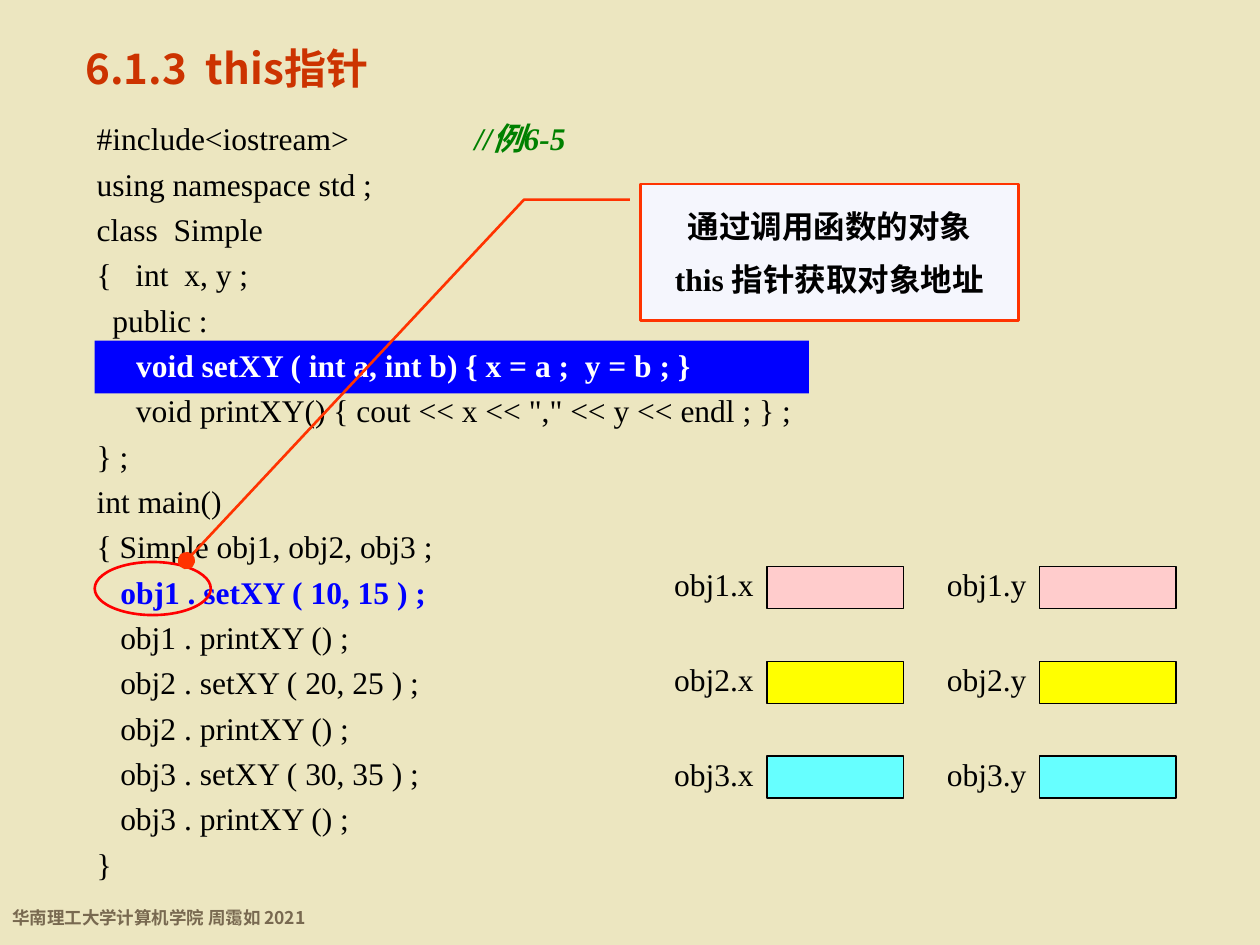
from lxml.etree import SubElement
from pptx import Presentation
from pptx.dml.color import RGBColor
from pptx.enum.shapes import MSO_SHAPE
from pptx.enum.text import MSO_ANCHOR, PP_ALIGN
from pptx.oxml.ns import qn
from pptx.util import Cm, Pt

SANS = "Noto Sans CJK SC"
SERIF = "Times New Roman"


def ink(code):
    return RGBColor.from_string(code)


def style(para, size, face, hue, bold, space):
    para.line_spacing = space
    font = para.font
    font.size = Pt(size)
    font.name = face
    font.bold = bold
    font.color.rgb = ink(hue)
    base = para._p.pPr.find(qn("a:defRPr"))
    SubElement(base, qn("a:ea")).set("typeface", SANS)


deck = Presentation()
deck.slide_width = Cm(25.4)
deck.slide_height = Cm(19.05)
slide = deck.slides.add_slide(deck.slide_layouts[6])
slide.background.fill.solid()
slide.background.fill.fore_color.rgb = ink("ECE6C0")
shapes = slide.shapes

bar = shapes.add_shape(MSO_SHAPE.RECTANGLE, Cm(1.91), Cm(6.87), Cm(14.4), Cm(1.06))
bar.shadow.inherit = False
bar.fill.solid()
bar.fill.fore_color.rgb = ink("0000FF")
bar.line.fill.background()

texts = [
    ("华南理工大学计算机学院 周霭如 2021", 0, 17.99, 6.76, 0.86, 10, SANS, "786950", True, 1.4),
    ("6.1.3  this指针", 1.47, 0.74, 15.67, 1.7, 24, SANS, "CC3300", True, 1),
]
for row, hue in enumerate(("FFCCCC", "FFFF00", "66FFFF")):
    top = 11.42 + row * 1.91
    for col, name in enumerate("xy"):
        left = 13.34 + col * 5.5
        cell = shapes.add_shape(MSO_SHAPE.RECTANGLE, Cm(left + 2.12), Cm(top), Cm(2.75), Cm(0.85))
        cell.shadow.inherit = False
        cell.fill.solid()
        cell.fill.fore_color.rgb = ink(hue)
        cell.line.color.rgb = ink("000000")
        cell.line.width = Pt(0.75)
        texts.append((f"obj{row + 1}.{name}", left, top, 2.12, 0.86, 18, SERIF, "000000", False, 0.8))

for words, left, top, width, height, *look in texts:
    box = shapes.add_textbox(Cm(left), Cm(top), Cm(width), Cm(height))
    box.text_frame.word_wrap = True
    box.text_frame.margin_right = 0
    para = box.text_frame.paragraphs[0]
    para.text = words
    style(para, *look)

lines = [
    "#include<iostream> \t",
    "using namespace std ;",
    "class  Simple",
    "{   int  x, y ;",
    "  public :",
    "     void setXY ( int a, int b) { x = a ;  y = b ; }",
    "     void printXY() { cout << x << \",\" << y << endl ; } ;",
    "} ;",
    "int main()",
    "{ Simple obj1, obj2, obj3 ;",
    "   obj1 . setXY ( 10, 15 ) ;",
    "   obj1 . printXY () ;",
    "   obj2 . setXY ( 20, 25 ) ;",
    "   obj2 . printXY () ;",
    "   obj3 . setXY ( 30, 35 ) ;",
    "   obj3 . printXY () ;",
    "}",
]
marks = {5: "FFFFFF", 10: "0000FF"}
code = shapes.add_textbox(Cm(1.7), Cm(2.13), Cm(15.24), Cm(15.85)).text_frame
code.word_wrap = True
first = code.paragraphs[0]
first.line_spacing = 1.2
tabs = SubElement(first._p.pPr, qn("a:tabLst"))
stop = SubElement(tabs, qn("a:tab"))
stop.set("pos", str(Cm(7.62)))
stop.set("algn", "l")

for num, line in enumerate(lines):
    para = first if num == 0 else code.add_paragraph()
    hue = marks.get(num, "000000")
    bare = line.lstrip() if num in marks else line
    pad = line[:len(line) - len(bare)]
    if pad:
        para.add_run().text = pad
        para.runs[0].font.bold = False
    para.add_run().text = bare
    style(para, 18, SERIF, hue, num in marks, 1.2)

note = first.add_run()
note.text = "//例6-5"
note.font.bold = True
note.font.italic = True
note.font.color.rgb = ink("008000")

ring = shapes.add_shape(MSO_SHAPE.OVAL, Cm(1.91), Cm(11.33), Cm(2.34), Cm(1.07))
ring.fill.background()
call = shapes.add_shape(MSO_SHAPE.LINE_CALLOUT_2, Cm(12.91), Cm(3.71), Cm(7.62), Cm(2.75))
call.fill.solid()
call.fill.fore_color.rgb = ink("F5F6FD")
for shape, hue in ((ring, "FF0000"), (call, "FF3300")):
    shape.shadow.inherit = False
    shape.line.color.rgb = ink(hue)
    shape.line.width = Pt(1.5)
for num, value in enumerate((0.115, -0.028, 0.115, -0.308, 2.761, -1.201)):
    call.adjustments[num] = value
edge = call._element.spPr.find(qn("a:ln"))
tail = SubElement(edge, qn("a:tailEnd"))
for key, value in (("type", "oval"), ("w", "lg"), ("len", "lg")):
    tail.set(key, value)

frame = call.text_frame
frame.word_wrap = True
frame.vertical_anchor = MSO_ANCHOR.MIDDLE
frame.text = "通过调用函数的对象\nthis 指针获取对象地址"
for para in frame.paragraphs:
    para.alignment = PP_ALIGN.CENTER
    style(para, 18, SERIF, "000000", True, 1)
frame.paragraphs[1].space_before = Pt(9)

deck.save("out.pptx")
